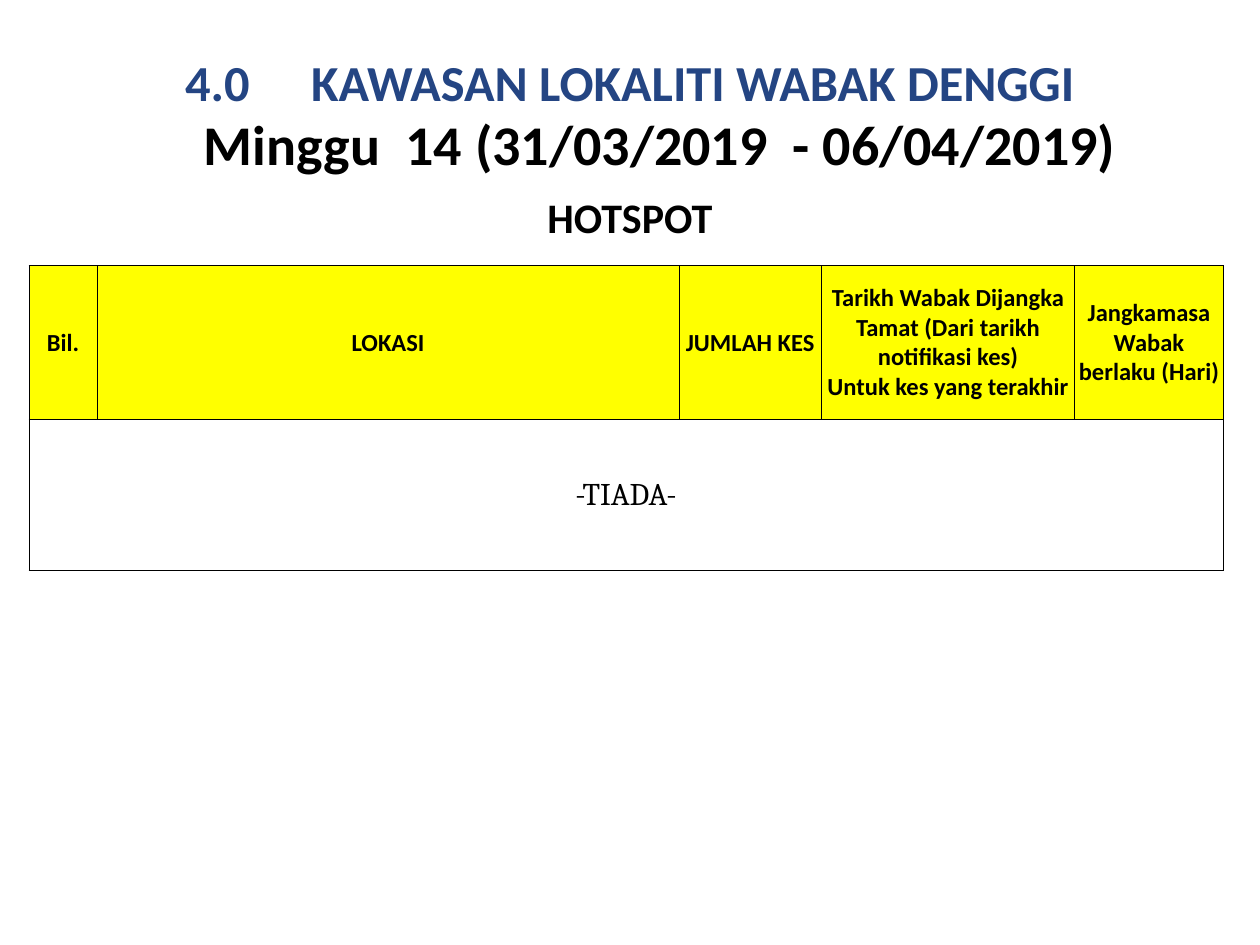
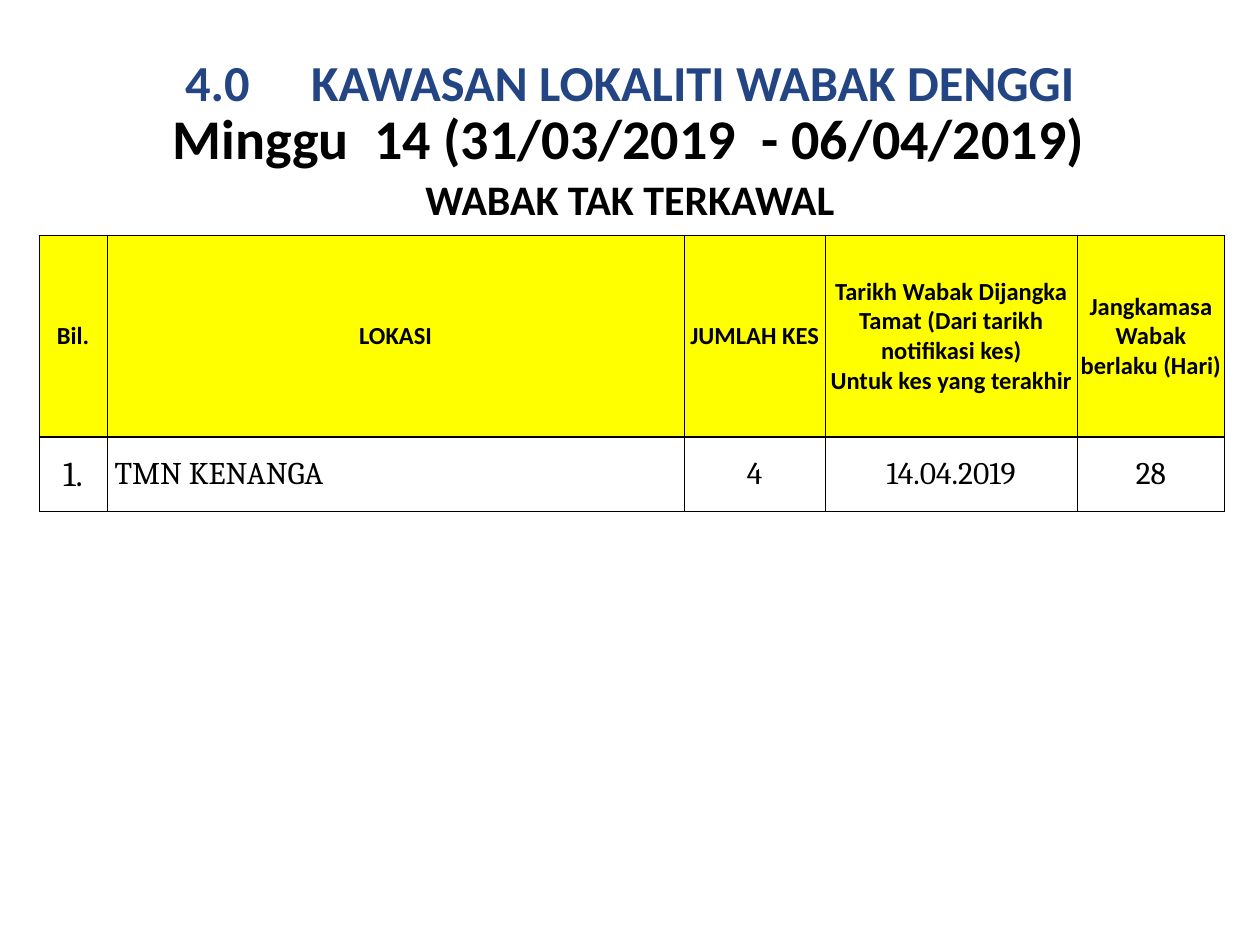
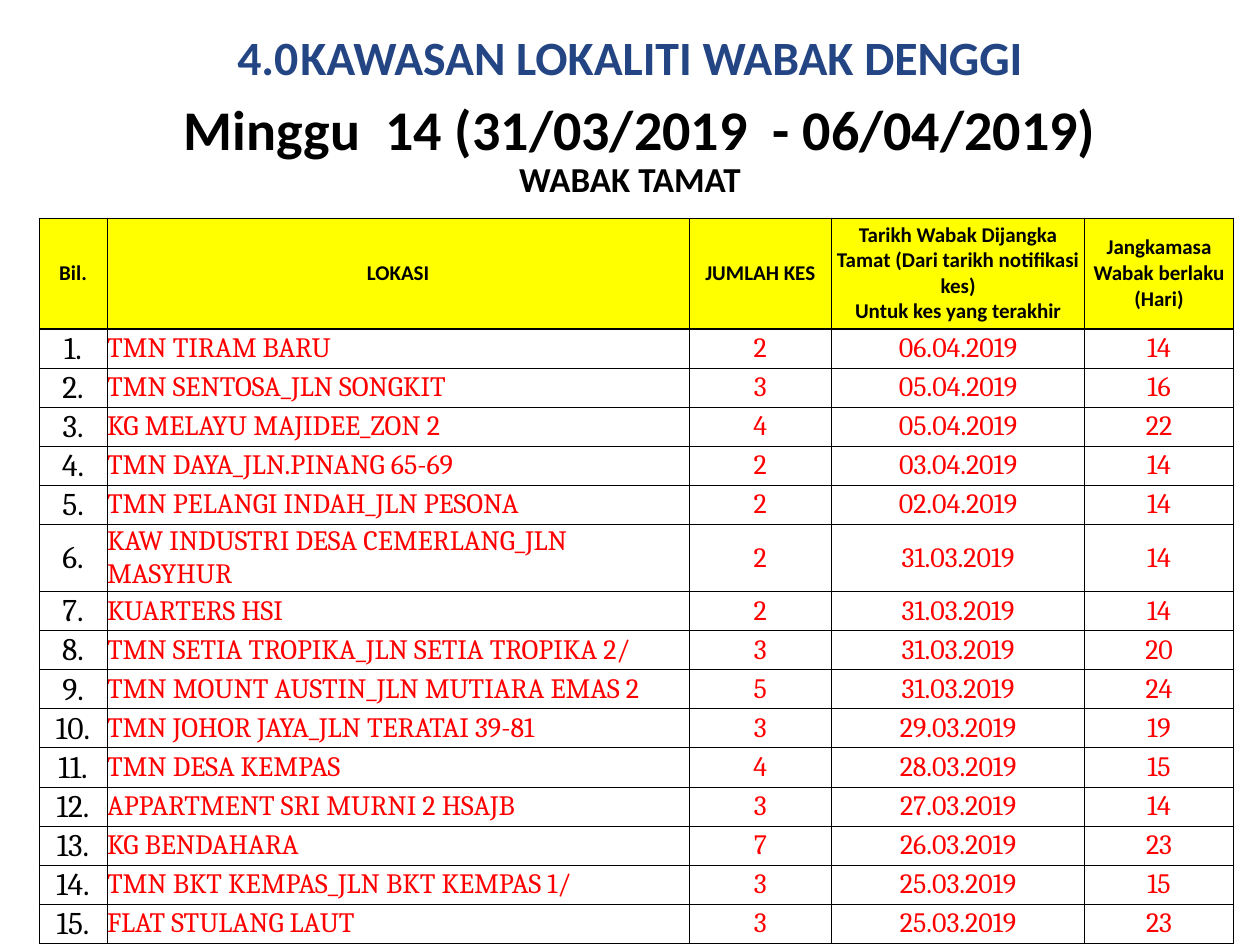
from lxml.etree import SubElement
from pptx import Presentation
from pptx.dml.color import RGBColor
from pptx.enum.text import MSO_ANCHOR, MSO_AUTO_SIZE, PP_ALIGN
from pptx.oxml.ns import qn
from pptx.util import Inches, Pt

BLUE, BLACK, RED, YELLOW, WHITE = "244583", "000000", "FF0000", "FFFF00", "FFFFFF"
HEAD_FONT, BODY_FONT = "Calibri", "Cambria"

TITLE = "4.0\tKAWASAN LOKALITI WABAK DENGGI"
WEEK = "Minggu  14 (31/03/2019  - 06/04/2019)"
HEADERS = [
    "Bil.",
    "LOKASI",
    "JUMLAH KES",
    "Tarikh Wabak Dijangka Tamat (Dari tarikh notifikasi kes)\nUntuk kes yang terakhir",
    "Jangkamasa Wabak berlaku (Hari)",
]
NONE_FOUND = "-TIADA-"
UNCONTROLLED = [("TMN KENANGA", 4, "14.04.2019", 28)]
ENDED = [
    ("TMN TIRAM BARU", 2, "06.04.2019", 14),
    ("TMN SENTOSA_JLN SONGKIT", 3, "05.04.2019", 16),
    ("KG MELAYU MAJIDEE_ZON 2", 4, "05.04.2019", 22),
    ("TMN DAYA_JLN.PINANG 65-69", 2, "03.04.2019", 14),
    ("TMN PELANGI INDAH_JLN PESONA", 2, "02.04.2019", 14),
    ("KAW INDUSTRI DESA CEMERLANG_JLN MASYHUR", 2, "31.03.2019", 14),
    ("KUARTERS HSI", 2, "31.03.2019", 14),
    ("TMN SETIA TROPIKA_JLN SETIA TROPIKA 2/", 3, "31.03.2019", 20),
    ("TMN MOUNT AUSTIN_JLN MUTIARA EMAS 2", 5, "31.03.2019", 24),
    ("TMN JOHOR JAYA_JLN TERATAI 39-81", 3, "29.03.2019", 19),
    ("TMN DESA KEMPAS", 4, "28.03.2019", 15),
    ("APPARTMENT SRI MURNI 2 HSAJB", 3, "27.03.2019", 14),
    ("KG BENDAHARA", 7, "26.03.2019", 23),
    ("TMN BKT KEMPAS_JLN BKT KEMPAS 1/", 3, "25.03.2019", 15),
    ("FLAT STULANG LAUT", 3, "25.03.2019", 23),
]
WIDE_COLS = [0.54, 4.62, 1.13, 2.01, 1.18]
NARROW_COLS = [0.54, 4.58, 1.12, 2, 1.17]

SLIDES = [
    dict(
        title=dict(top=0.36, size=28.8),
        week=dict(left=-0.05, top=0.82, height=0.98, indent=0.58, lift=0.34),
        heading=dict(text="HOTSPOT", top=1.47, height=0.5, size=24),
        table=dict(cases=[], left=0.23, top=2.11, cols=WIDE_COLS, head_h=1.22, row_h=1.2,
                   head_size=14, number_size=18, size=18, color=BLACK, indent=0, last_line=1),
    ),
    dict(
        title=dict(top=0.36, size=28.8),
        week=dict(left=-0.05, top=0.77, height=0.64, indent=0.08, lift=0),
        heading=dict(text="WABAK TAK TERKAWAL", top=1.33, height=0.5, size=24),
        table=dict(cases=UNCONTROLLED, left=0.31, top=1.87, cols=NARROW_COLS, head_h=1.6,
                   row_h=0.59, head_size=14, number_size=20, size=18, color=BLACK,
                   indent=0.06, last_line=1),
    ),
    dict(
        title=dict(top=0.16, size=27.3),
        week=dict(left=0.04, top=0.7, height=0.64, indent=0.08, lift=0),
        heading=dict(text="WABAK TAMAT", top=1.2, height=0.44, size=20),
        table=dict(cases=ENDED, left=0.31, top=1.73, cols=WIDE_COLS, head_h=0.88, row_h=0.3,
                   head_size=12, number_size=18, size=16, color=RED, indent=0, last_line=0.5),
    ),
]


def rgb(value):
    return RGBColor.from_string(value)


def write(tf, text, size, color=BLACK, font=HEAD_FONT, bold=True, align=PP_ALIGN.CENTER):
    for i, line in enumerate(text.split("\n")):
        p = tf.add_paragraph() if i else tf.paragraphs[0]
        p.alignment = align
        r = p.add_run()
        r.text = line
        for name, value in dict(name=font, size=Pt(size), bold=bold).items():
            setattr(r.font, name, value)
        r.font.color.rgb = rgb(color)


def add_line(s, text, top, height, size, left=0, color=BLACK, anchor=MSO_ANCHOR.MIDDLE,
             grow=True, indent=0, lift=0):
    sp = s.shapes.add_textbox(Inches(left), Inches(top), Inches(10), Inches(height))
    tf = sp.text_frame
    settings = dict(
        word_wrap=True,
        vertical_anchor=anchor,
        auto_size=MSO_AUTO_SIZE.SHAPE_TO_FIT_TEXT if grow else MSO_AUTO_SIZE.NONE,
        margin_left=Inches(0.1 + indent),
        margin_bottom=Inches(0.05 + lift),
    )
    for name, value in settings.items():
        setattr(tf, name, value)
    write(tf, text, size, color)


def style_cell(cell, fill, top, bottom, margins):
    tc_pr = cell._tc.get_or_add_tcPr()
    for side, width in dict(L=0.5, R=0.5, T=top, B=bottom).items():
        ln = SubElement(tc_pr, qn(f"a:ln{side}"), w=str(Pt(width)))
        SubElement(SubElement(ln, qn("a:solidFill")), qn("a:srgbClr"), val=BLACK)
    if fill:
        cell.fill.solid()
        cell.fill.fore_color.rgb = rgb(fill)
    else:
        cell.fill.background()
    cell.vertical_anchor = MSO_ANCHOR.MIDDLE
    for side, margin in zip(("left", "top", "right", "bottom"), margins):
        setattr(cell, f"margin_{side}", Inches(margin))


def add_cases(s, cases, left, top, cols, head_h, row_h, head_size, number_size, size, color,
              indent, last_line):
    body = [(f"{i}.", *map(str, case)) for i, case in enumerate(cases, 1)]
    body = body or [(NONE_FOUND, "", "", "", "")]
    heights = [head_h] + [row_h] * len(body)
    table = s.shapes.add_table(len(heights), len(cols), Inches(left), Inches(top),
                               Inches(sum(cols)), Inches(sum(heights))).table
    table.first_row = table.horz_banding = False
    for col, width in zip(table.columns, cols):
        col.width = Inches(width)
    for row, height in zip(table.rows, heights):
        row.height = Inches(height)

    for c, text in enumerate(HEADERS):
        cell = table.cell(0, c)
        style_cell(cell, YELLOW, 0.5, 1, (0, 0, 0, 0))
        write(cell.text_frame, text, head_size)
    for i, values in enumerate(body, 1):
        for c, text in enumerate(values):
            cell = table.cell(i, c)
            margins = (0.01, 0.01, 0.01, 0) if c == 0 else (indent if c == 1 else 0, 0, 0, 0)
            style_cell(cell, WHITE if cases else None, 1 if i == 1 else 0.5,
                       last_line if i == len(body) else 0.5, margins)
            if text:
                write(cell.text_frame, text, size if c else number_size,
                      color if c else BLACK, BODY_FONT, False,
                      PP_ALIGN.LEFT if c == 1 else PP_ALIGN.CENTER)
    if not cases:
        table.cell(1, 0).merge(table.cell(1, len(cols) - 1))


def main():
    prs = Presentation()
    prs.slide_width, prs.slide_height = Inches(10), Inches(7.5)
    for page in SLIDES:
        s = prs.slides.add_slide(prs.slide_layouts[6])
        add_line(s, TITLE, height=0.57, color=BLUE, grow=False, **page["title"])
        add_line(s, WEEK, size=32, **page["week"])
        add_line(s, anchor=MSO_ANCHOR.TOP, **page["heading"])
        add_cases(s, **page["table"])
    prs.save("out.pptx")


if __name__ == "__main__":
    main()
